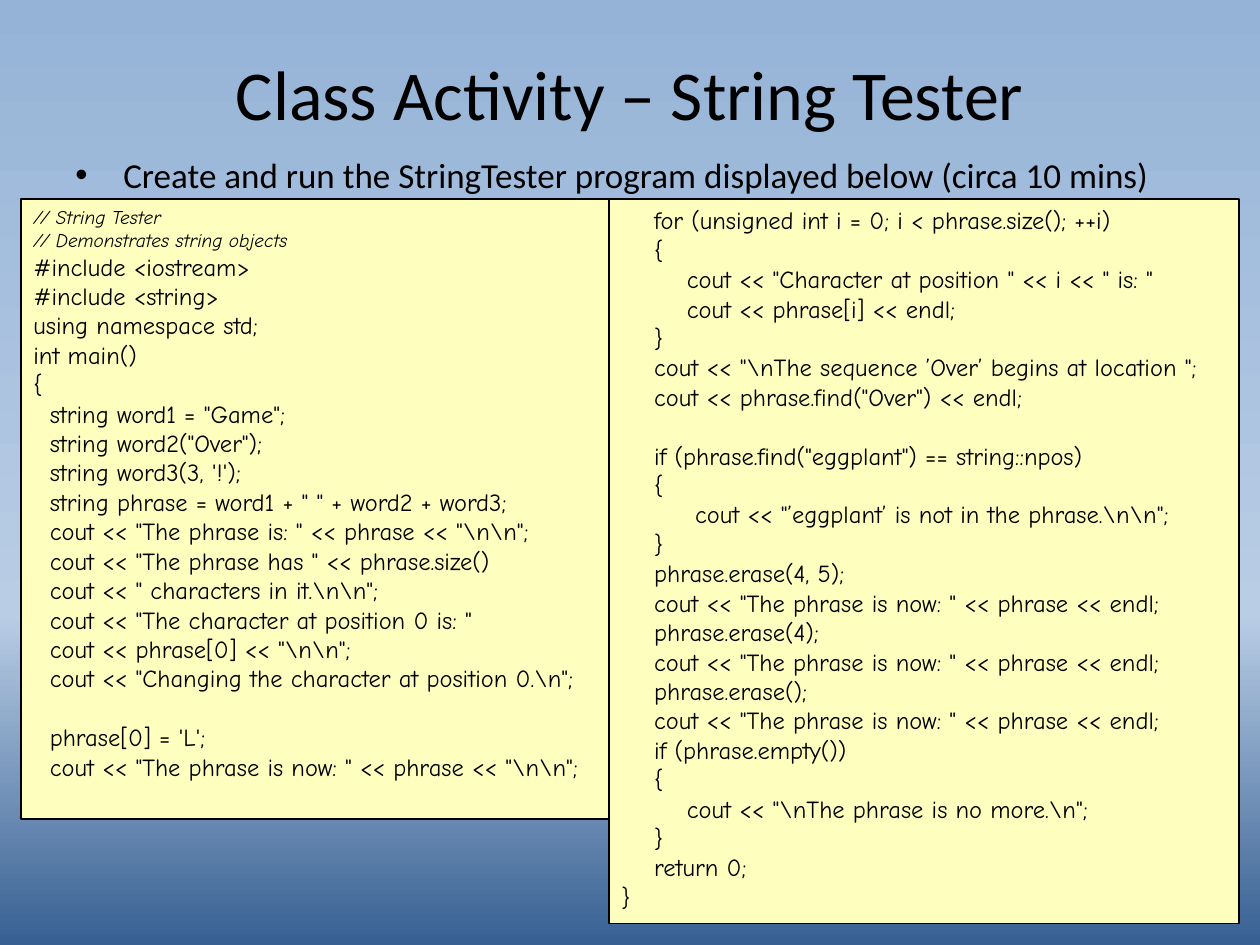
from copy import deepcopy

from lxml import etree
from pptx import Presentation
from pptx.dml.color import RGBColor
from pptx.enum.shapes import MSO_SHAPE
from pptx.enum.text import MSO_ANCHOR, PP_ALIGN
from pptx.oxml.ns import qn
from pptx.util import Inches, Pt

RECTANGLE = MSO_SHAPE.RECTANGLE
TOP, MIDDLE = MSO_ANCHOR.TOP, MSO_ANCHOR.MIDDLE
LEFT, CENTER = PP_ALIGN.LEFT, PP_ALIGN.CENTER

BLACK = RGBColor(0x00, 0x00, 0x00)
PALE_YELLOW = RGBColor(0xFE, 0xFE, 0xBF)
SKY = [
    (0, RGBColor(0x95, 0xB3, 0xD7)),
    (0.65, RGBColor(0xB9, 0xCD, 0xE5)),
    (1, RGBColor(0x37, 0x60, 0x92)),
]

TITLE_FONT = {"name": "Calibri", "size": Pt(40)}
TASK_FONT = {"name": "Calibri", "size": Pt(20)}
CODE_FONT = {"name": "Comic Neue", "size": Pt(14), "italic": False}
COMMENT_FONT = {**CODE_FONT, "size": Pt(11), "italic": True}

WIDTH, HEIGHT = 10, 7.5
MARGIN = WIDTH / 60          # left and right of the code panels
CODE_TOP = 1.58
SPACE_WIDTH = 0.065          # one column of code indentation
CODE_LINE = Pt(16.8)         # height of one empty line of code

DECLARATIONS = r"""
// String Tester
// Demonstrates string objects
#include <iostream>
#include <string>
using namespace std;
int main()
{
  string word1 = "Game";
  string word2("Over");
  string word3(3, '!');
  string phrase = word1 + " " + word2 + word3;
  cout << "The phrase is: " << phrase << "\n\n";
  cout << "The phrase has " << phrase.size()
  cout << " characters in it.\n\n";
  cout << "The character at position 0 is: "
  cout << phrase[0] << "\n\n";
  cout << "Changing the character at position 0.\n";

  phrase[0] = 'L';
  cout << "The phrase is now: " << phrase << "\n\n";
"""

OPERATIONS = r"""
    for (unsigned int i = 0; i < phrase.size(); ++i)
    {
        cout << "Character at position " << i << " is: "
        cout << phrase[i] << endl;
    }
    cout << "\nThe sequence ’Over’ begins at location ";
    cout << phrase.find("Over") << endl;

    if (phrase.find("eggplant") == string::npos)
    {
         cout << "’eggplant’ is not in the phrase.\n\n";
    }
    phrase.erase(4, 5);
    cout << "The phrase is now: " << phrase << endl;
    phrase.erase(4);
    cout << "The phrase is now: " << phrase << endl;
    phrase.erase();
    cout << "The phrase is now: " << phrase << endl;
    if (phrase.empty())
    {
        cout << "\nThe phrase is no more.\n";
    }
    return 0;
}
"""


def paint_background(slide):
    """Vertical gradient with three stops."""
    fill = slide.background.fill
    fill.gradient()
    fill.gradient_angle = 270
    stop_list = slide.element.find(".//" + qn("a:gsLst"))
    while len(stop_list) < len(SKY):
        stop_list.append(deepcopy(stop_list[-1]))
    for stop, (position, color) in zip(fill.gradient_stops, SKY):
        stop.position = position
        stop.color.rgb = color


def write(paragraph, text, font, align=LEFT):
    paragraph.alignment = align
    run = paragraph.add_run()
    run.text = text
    run.font.color.rgb = BLACK
    for attribute, value in font.items():
        setattr(run.font, attribute, value)


def set_indent(paragraph, left, hanging=0):
    properties = paragraph._p.get_or_add_pPr()
    properties.set("marL", str(Inches(left)))
    properties.set("indent", str(-Inches(hanging)))
    return properties


def add_text(slide, box, text, font, align=LEFT, anchor=TOP):
    frame = slide.shapes.add_textbox(*map(Inches, box)).text_frame
    frame.word_wrap = True
    frame.vertical_anchor = anchor
    write(frame.paragraphs[0], text, font, align)
    return frame.paragraphs[0]


def add_bullet(paragraph):
    properties = set_indent(paragraph, 0.38, 0.38)
    etree.SubElement(properties, qn("a:buFont"), typeface="Arial")
    etree.SubElement(properties, qn("a:buChar"), char="•")


def add_code(slide, box, source):
    """Code panel: leading spaces become indents, empty lines become gaps."""
    panel = slide.shapes.add_shape(RECTANGLE, *map(Inches, box))
    panel.shadow.inherit = False
    panel.fill.solid()
    panel.fill.fore_color.rgb = PALE_YELLOW
    panel.line.color.rgb = BLACK
    panel.line.width = Pt(0.75)

    frame = panel.text_frame
    frame.word_wrap = True
    frame.vertical_anchor = TOP
    paragraph, gap = frame.paragraphs[0], 0
    for number, line in enumerate(source.strip("\n").split("\n")):
        code = line.lstrip()
        if not code:
            gap = CODE_LINE
            continue
        if number:
            paragraph = frame.add_paragraph()
        write(paragraph, code, COMMENT_FONT if code.startswith("//") else CODE_FONT)
        set_indent(paragraph, (len(line) - len(code)) * SPACE_WIDTH)
        paragraph.space_before, gap = gap, 0


def main():
    prs = Presentation()
    prs.slide_width, prs.slide_height = Inches(WIDTH), Inches(HEIGHT)
    slide = prs.slides.add_slide(prs.slide_layouts[6])
    paint_background(slide)

    # Heading and task
    add_text(slide, (0.5, 0.3, 9, 0.87), "Class Activity – String Tester",
             TITLE_FONT, CENTER, MIDDLE)
    task = add_text(
        slide, (0.5, 1.17, 9.25, 0.42),
        "Create and run the StringTester program displayed below (circa 10 mins)",
        TASK_FONT)
    add_bullet(task)

    # Program in two adjoining panels
    right_width = WIDTH / 2
    split = WIDTH - MARGIN - right_width
    add_code(slide, (MARGIN, CODE_TOP, split - MARGIN, 4.92), DECLARATIONS)
    add_code(slide, (split, CODE_TOP, right_width, 5.75), OPERATIONS)

    prs.save("out.pptx")


if __name__ == "__main__":
    main()
